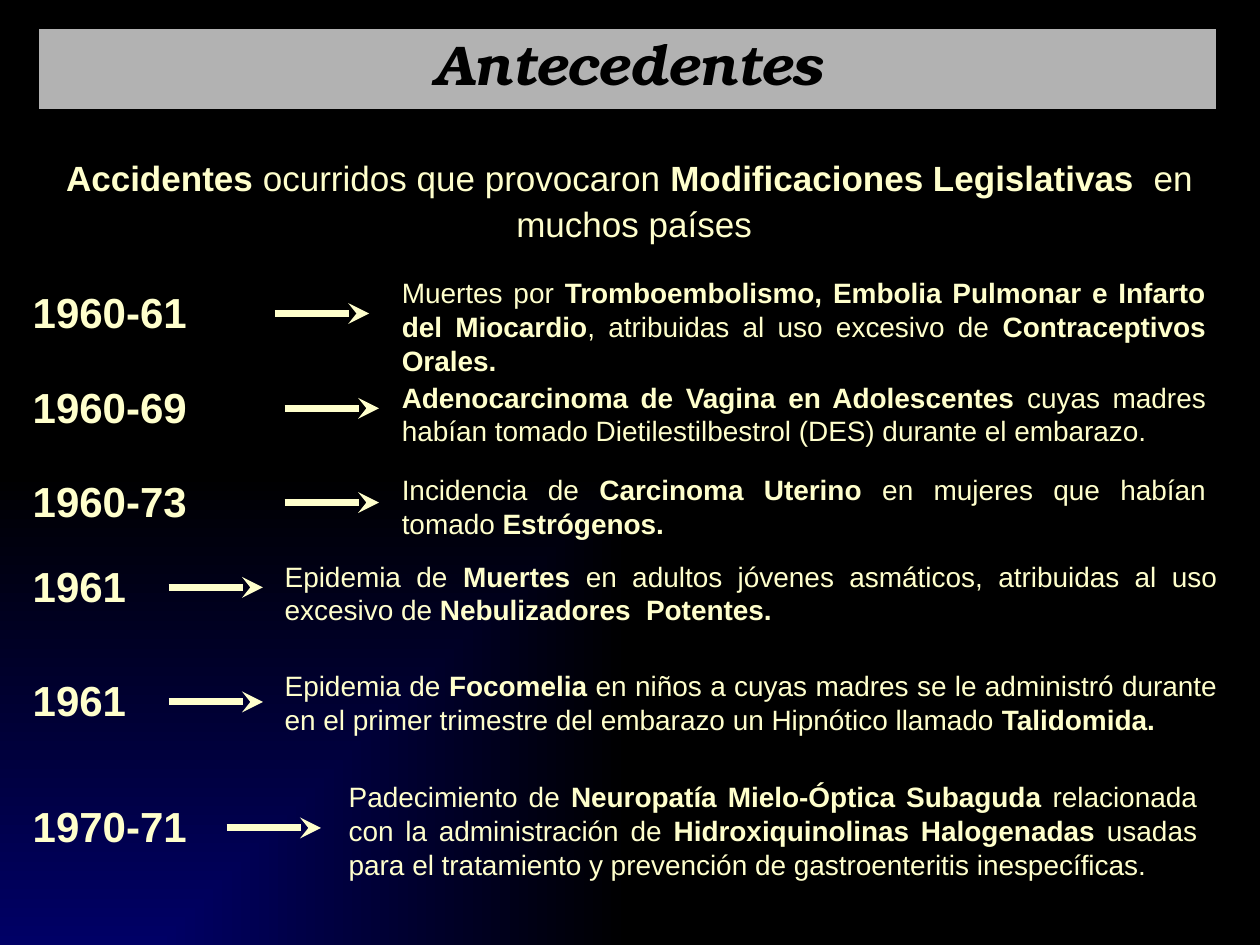
import pptx
import pptx.util
import pptx.dml.color
import pptx.enum.shapes
import pptx.enum.text
import pptx.oxml
import pptx.oxml.ns

Cm = pptx.util.Cm
Pt = pptx.util.Pt
RGBColor = pptx.dml.color.RGBColor
ALIGN = pptx.enum.text.PP_ALIGN
qn = pptx.oxml.ns.qn

CREAM = RGBColor(0xFF, 0xFF, 0xCC)
GRAY = RGBColor(0xB2, 0xB2, 0xB2)
BLACK = RGBColor(0, 0, 0)
NAVY = RGBColor(0, 0, 0x66)

WIDE = (5.74, 7.85, 16.71)
NEAR = (3.4, 5.49, 19.3)

# Each row: year, arrow height, (arrow left, text left, text width), text top, text height, runs
ROWS = [
    ("1960-61", 6.32, (5.54, 7.85, 16.71), 5.44, 2.29,
     ["Muertes por ", "Tromboembolismo, Embolia Pulmonar e Infarto del Miocardio",
      ", atribuidas al uso excesivo de ", "Contraceptivos Orales."]),
    ("1960-69", 8.23, WIDE, 7.54, 1.63,
     ["", "Adenocarcinoma de Vagina en Adolescentes",
      " cuyas madres habían tomado Dietilestilbestrol (DES) durante el embarazo."]),
    ("1960-73", 10.13, WIDE, 9.4, 1.63,
     ["Incidencia de ", "Carcinoma Uterino",
      " en mujeres que habían tomado ", "Estrógenos."]),
    ("1961", 11.84, NEAR, 11.15, 1.63,
     ["Epidemia de ", "Muertes ",
      "en adultos jóvenes asmáticos, atribuidas al uso excesivo de ",
      "Nebulizadores  Potentes."]),
    ("1961", 14.15, NEAR, 13.36, 1.63,
     ["Epidemia de ", "Focomelia ",
      "en niños a cuyas madres se le administró durante en el primer trimestre "
      "del embarazo un Hipnótico llamado ", "Talidomida."]),
    ("1970-71", 16.69, (4.57, 6.78, 17.6), 15.6, 2.29,
     ["Padecimiento de ", "Neuropatía Mielo-Óptica Subaguda",
      " relacionada con la administración de ", "Hidroxiquinolinas Halogenadas",
      " usadas para el tratamiento y prevención de gastroenteritis inespecíficas."]),
]


def add_run(para, text, size, bold, color=CREAM, face="Arial"):
    run = para.add_run()
    run.text = text
    font = run.font
    font.name, font.size, font.bold = face, Pt(size), bold
    font.color.rgb = color
    return run


def add_text(slide, box, parts, size, align, wrap=True):
    frame = slide.shapes.add_textbox(*map(Cm, box)).text_frame
    frame.word_wrap = wrap
    para = frame.paragraphs[0]
    para.alignment = align
    for i, part in enumerate(parts):
        if part:
            add_run(para, part, size, i % 2 == 1)
    return para


def add_arrow(slide, left, y):
    arrow = slide.shapes.add_connector(
        pptx.enum.shapes.MSO_CONNECTOR.STRAIGHT,
        Cm(left), Cm(y), Cm(left + 1.9), Cm(y))
    arrow.line.color.rgb = CREAM
    arrow.line.width = Pt(4)
    tip = pptx.oxml.parse_xml(
        '<a:tailEnd xmlns:a="http://schemas.openxmlformats.org/drawingml/2006/main"'
        ' type="stealth"/>')
    arrow.line._get_or_add_ln().append(tip)
    props = arrow._element.spPr
    props.append(props.makeelement(qn("a:effectLst"), {}))


def add_title(slide):
    bar = slide.shapes.add_shape(
        pptx.enum.shapes.MSO_SHAPE.RECTANGLE,
        Cm(0.69), Cm(0.48), Cm(23.93), Cm(1.83))
    bar.shadow.inherit = False
    bar.fill.solid()
    bar.fill.fore_color.rgb = GRAY
    bar.line.color.rgb = BLACK
    bar.line.width = Pt(6)
    frame = bar.text_frame
    frame.vertical_anchor = pptx.enum.text.MSO_ANCHOR.TOP
    para = frame.paragraphs[0]
    para.alignment = ALIGN.CENTER
    run = add_run(para, "Antecedentes", 32, True, BLACK, "TeX Gyre Bonum")
    run.font.italic = True


def paint_back(slide):
    fill = slide.background.fill
    fill.gradient()
    for stop, color, place in zip(fill.gradient_stops, (NAVY, BLACK), (0, 1)):
        stop.color.rgb = color
        stop.position = place
    line = next(slide._element.iter(qn("a:lin")))
    glow = pptx.oxml.parse_xml(
        '<a:path xmlns:a="http://schemas.openxmlformats.org/drawingml/2006/main"'
        ' path="rect"><a:fillToRect t="100000" r="100000"/></a:path>')
    line.getparent().replace(line, glow)


def add_row(slide, year, y, cols, top, height, parts):
    start, left, width = cols
    span = 3.63 if len(year) > 4 else 2.39
    add_text(slide, (0.41, y - 0.67, span, 1.27), ["", year], 24, ALIGN.LEFT, False)
    add_arrow(slide, start, y)
    add_text(slide, (left, top, width, height), parts, 16, ALIGN.JUSTIFY)


def main():
    deck = pptx.Presentation()
    deck.slide_width, deck.slide_height = Cm(25.4), Cm(19.05)
    slide = deck.slides.add_slide(deck.slide_layouts[6])
    paint_back(slide)
    add_title(slide)
    lead = add_text(
        slide, (0.2, 2.95, 25.17, 2.11),
        ["", "Accidentes ", "ocurridos que provocaron ",
         "Modificaciones Legislativas ", " en  muchos países"],
        20, ALIGN.CENTER)
    lead.line_spacing = 1.1
    for row in ROWS:
        add_row(slide, *row)
    deck.save("out.pptx")


if __name__ == "__main__":
    main()
